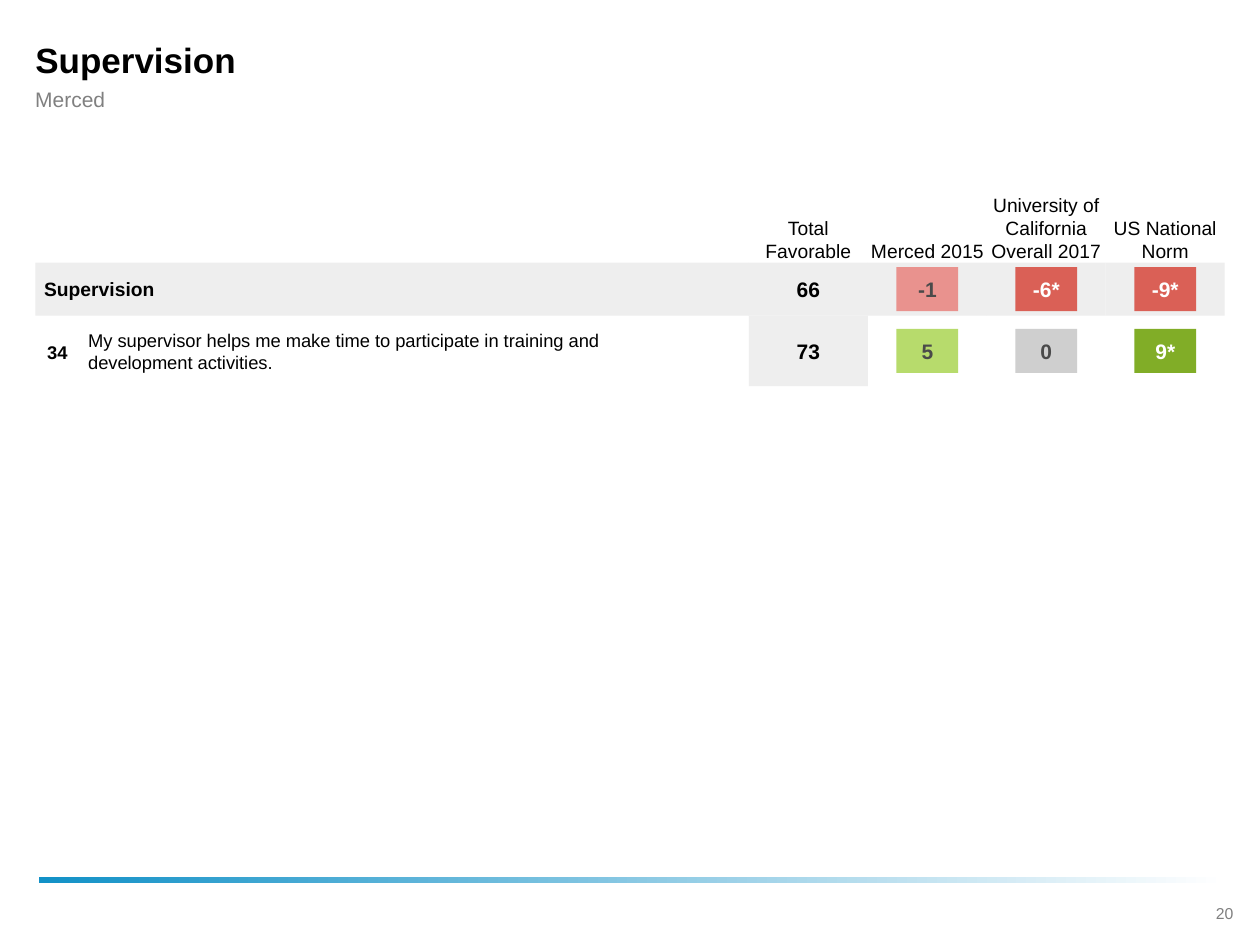
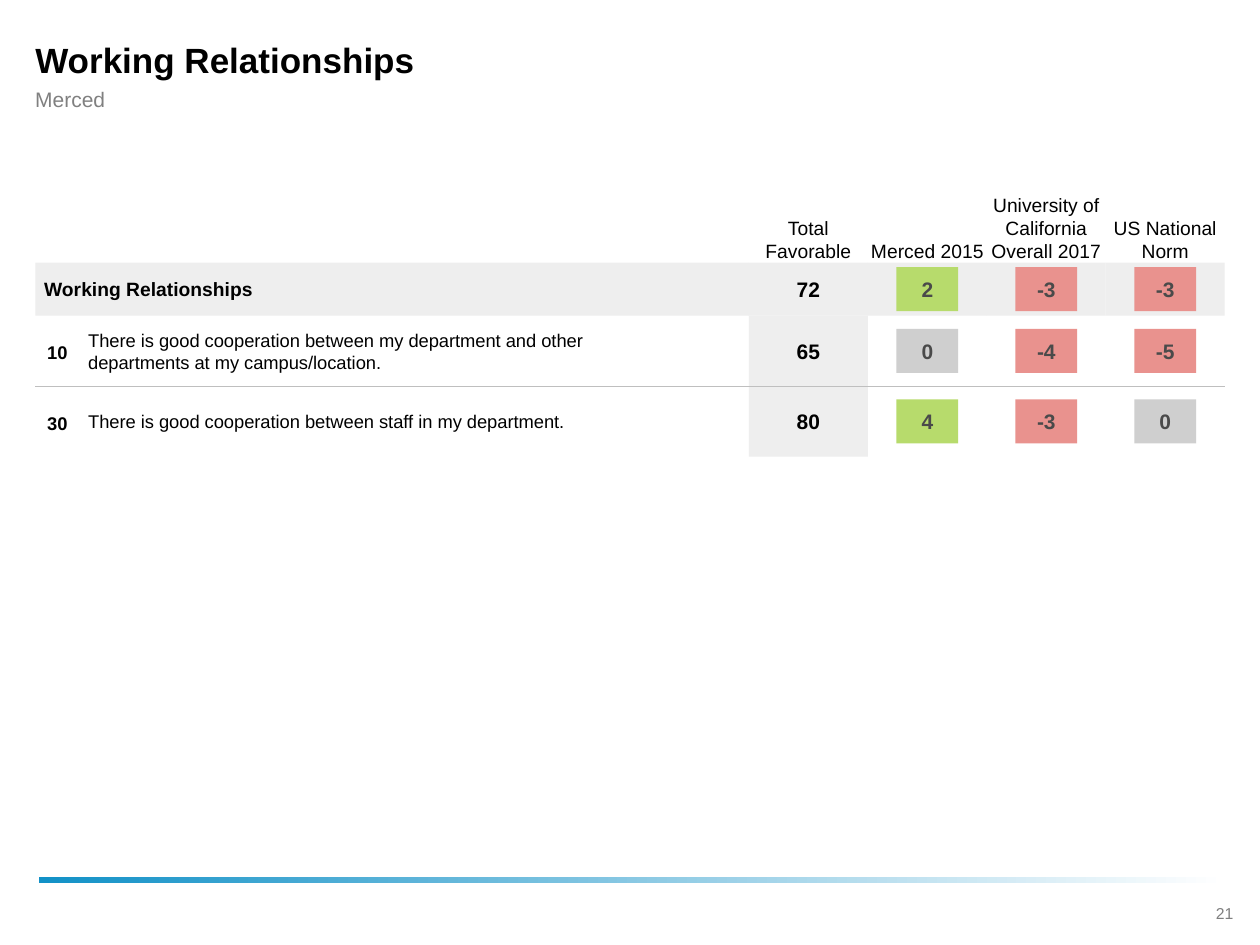
from dataclasses import dataclass

from lxml import etree
from pptx import Presentation, util as u
from pptx.dml.color import RGBColor
from pptx.enum import shapes, text
from pptx.oxml.ns import qn


@dataclass(frozen=True)
class Theme:
    """Colours, type sizes and font of the deck."""
    font: str = "Arial"
    ink: str = "000000"
    muted: str = "808080"
    folio: str = "7F7F7F"
    paper: str = "FFFFFF"
    dark: str = "4A4A4A"
    band: str = "EEEEEE"
    rule: str = "BFBFBF"
    accent: str = "1291C7"
    zero: str = "CFCFCF"
    low: str = "E9928E"
    worst: str = "DA6056"
    high: str = "B7DB6C"
    best: str = "81AD27"
    title: float = 20
    value: float = 12
    label: float = 11
    item: float = 10.5
    page: float = 9


@dataclass(frozen=True)
class Box:
    """A rectangle in inches."""
    x: float
    y: float
    w: float
    h: float

    def emu(self):
        """Give left, top, width and height as slide lengths."""
        return [u.Inches(n) for n in (self.x, self.y, self.w, self.h)]

    def cols(self, start, count=1):
        """Give a span of the ten grid columns."""
        unit = self.w / COLS
        return Box(self.x + start * unit, self.y, count * unit, self.h)

    def rows(self, top, height):
        """Give a horizontal strip, measured from the top."""
        return Box(self.x, self.y + top, self.w, height)

    def mid(self, w, h):
        """Give a centred rectangle of the given size."""
        return Box(self.x + (self.w - w) / 2, self.y + (self.h - h) / 2, w, h)


T = Theme()
WIDE, HIGH = 10, 7.5
COLS, LEAD = 10, 6
EDGE = 0.028 * WIDE
BODY = Box(EDGE, 0.13 * HIGH, WIDE - 2 * EDGE, 0.8 * HIGH)
HEAD, TOTAL, ITEM = 1.11, 0.42, 0.56
CHIP = (0.49, 0.35)
NUM = 0.35
LEFT, MID = text.PP_ALIGN.LEFT, text.PP_ALIGN.CENTER
HEADS = ("Total Favorable", "Merced 2015",
         "University of California Overall 2017", "US National Norm")
PAGES = (
    (20, "Supervision", (66, "-1", "-6*", "-9*"), (
        (34, "My supervisor helps me make time to participate in training "
             "and development activities.", (73, "5", "0", "9*")),
    )),
    (21, "Working Relationships", (72, "2", "-3", "-3"), (
        (10, "There is good cooperation between my department and other "
             "departments at my campus/location.", (65, "0", "-4", "-5")),
        (30, "There is good cooperation between staff in my department.",
         (80, "4", "-3", "0")),
    )),
)


def paint(hue):
    """Turn a hex string into a colour."""
    return RGBColor.from_string(hue)


def write(shape, words, size=T.label, hue=T.ink, bold=False, align=LEFT,
          anchor=text.MSO_ANCHOR.MIDDLE, inset=(0, 0, 0, 0), wrap=True):
    """Fill a shape with one formatted paragraph."""
    frame = shape.text_frame
    frame.auto_size = text.MSO_AUTO_SIZE.NONE
    frame.word_wrap = wrap
    frame.vertical_anchor = anchor
    (frame.margin_left, frame.margin_top,
     frame.margin_right, frame.margin_bottom) = map(u.Inches, inset)
    para = frame.paragraphs[0]
    para.alignment = align
    run = para.add_run()
    run.text = str(words)
    font = run.font
    font.name, font.size, font.bold = T.font, u.Pt(size), bold
    font.color.rgb = paint(hue)


def label(slide, box, words, **form):
    """Add a text box."""
    write(slide.shapes.add_textbox(*box.emu()), words, **form)


def block(slide, box, hue):
    """Add a plain filled rectangle."""
    shape = slide.shapes.add_shape(shapes.MSO_SHAPE.RECTANGLE, *box.emu())
    shape.shadow.inherit = False
    shape.line.fill.background()
    shape.fill.solid()
    shape.fill.fore_color.rgb = paint(hue)
    return shape


def rule(slide, box):
    """Draw a thin line along the top of a box."""
    x, y, w, _ = box.emu()
    line = slide.shapes.add_connector(shapes.MSO_CONNECTOR.STRAIGHT,
                                      x, y, x + w, y)
    line.line.color.rgb = paint(T.rule)
    line.line.width = u.Pt(0.75)
    etree.SubElement(line._element.spPr, qn("a:effectLst"))


def tones(score):
    """Choose fill and text colours from a score and its star."""
    gap, star = int(score.rstrip("*")), score.endswith("*")
    if gap == 0:
        return T.zero, T.dark
    if star:
        return (T.best if gap > 0 else T.worst), T.paper
    return (T.high if gap > 0 else T.low), T.dark


def scores(slide, box, marks):
    """Place the total and the coloured gaps of one row."""
    total, *gaps = marks
    cell = box.cols(LEAD)
    label(slide, cell.mid(cell.w, 0.19), total, size=T.value, bold=True,
          align=MID)
    for i, gap in enumerate(gaps, LEAD + 1):
        fill, ink = tones(gap)
        chip = block(slide, box.cols(i).mid(*CHIP), fill)
        write(chip, gap, size=T.value, hue=ink, bold=True, align=MID,
              inset=(0, 0.05, 0, 0.05), wrap=False)


def heads(slide, box):
    """Place the column headings."""
    for i, words in enumerate(HEADS, LEAD):
        label(slide, box.cols(i), words, align=MID,
              anchor=text.MSO_ANCHOR.BOTTOM)


def total(slide, box, name, marks):
    """Place the shaded summary row."""
    for start, count in [(0, LEAD)] + [(i, 1) for i in range(LEAD, COLS)]:
        block(slide, box.cols(start, count), T.band)
    label(slide, box.cols(0, LEAD), name, bold=True,
          inset=(0.07, 0, 0.07, 0))
    scores(slide, box, marks)


def item(slide, box, num, words, marks, ruled):
    """Place one numbered question row."""
    block(slide, box.cols(LEAD), T.band)
    if ruled:
        rule(slide, box)
    label(slide, Box(box.x, box.y + 0.18, NUM, 0.22), num, size=T.item,
          bold=True, align=MID)
    label(slide, Box(box.x + NUM, box.y + 0.05, 5.1, 0.46), words,
          size=T.item, inset=(0.07, 0, 0.35, 0))
    scores(slide, box, marks)


def frame(slide, page, name):
    """Place the title, subtitle, gradient band and page number."""
    head = slide.shapes.title
    box = Box(EDGE, EDGE, BODY.w, 0.38)
    head.left, head.top, head.width, head.height = box.emu()
    write(head, name, size=T.title, bold=True, inset=(0, 0, 0.35, 0))
    label(slide, box.rows(0.4, 0.21), "Merced", size=T.value, hue=T.muted,
          inset=(0, 0, 0.35, 0))
    band = block(slide, Box(0.31, 6.96, 9.42, 0.05), T.accent)
    band.fill.gradient()
    band.fill.gradient_angle = 0
    for stop, hue in zip(band.fill.gradient_stops, (T.accent, T.paper)):
        stop.color.rgb = paint(hue)
    label(slide, Box(9.46, 7.12, 0.52, 0.25), page, size=T.page, hue=T.folio,
          align=MID, anchor=text.MSO_ANCHOR.TOP,
          inset=(0.1, 0.05, 0.1, 0.05))


def report(slide, box, name, marks, items):
    """Stack headings, summary and questions in a box."""
    heads(slide, box.rows(0, HEAD))
    total(slide, box.rows(HEAD, TOTAL), name, marks)
    for i, row in enumerate(items):
        item(slide, box.rows(HEAD + TOTAL + i * ITEM, ITEM), *row,
             ruled=i > 0)


def main():
    """Build and save the deck."""
    deck = Presentation()
    deck.slide_width, deck.slide_height = u.Inches(WIDE), u.Inches(HIGH)
    plain = deck.slide_layouts.get_by_name("Title Only")
    for page, name, marks, items in PAGES:
        slide = deck.slides.add_slide(plain)
        frame(slide, page, name)
        report(slide, BODY, name, marks, items)
    deck.save("out.pptx")


if __name__ == "__main__":
    main()
